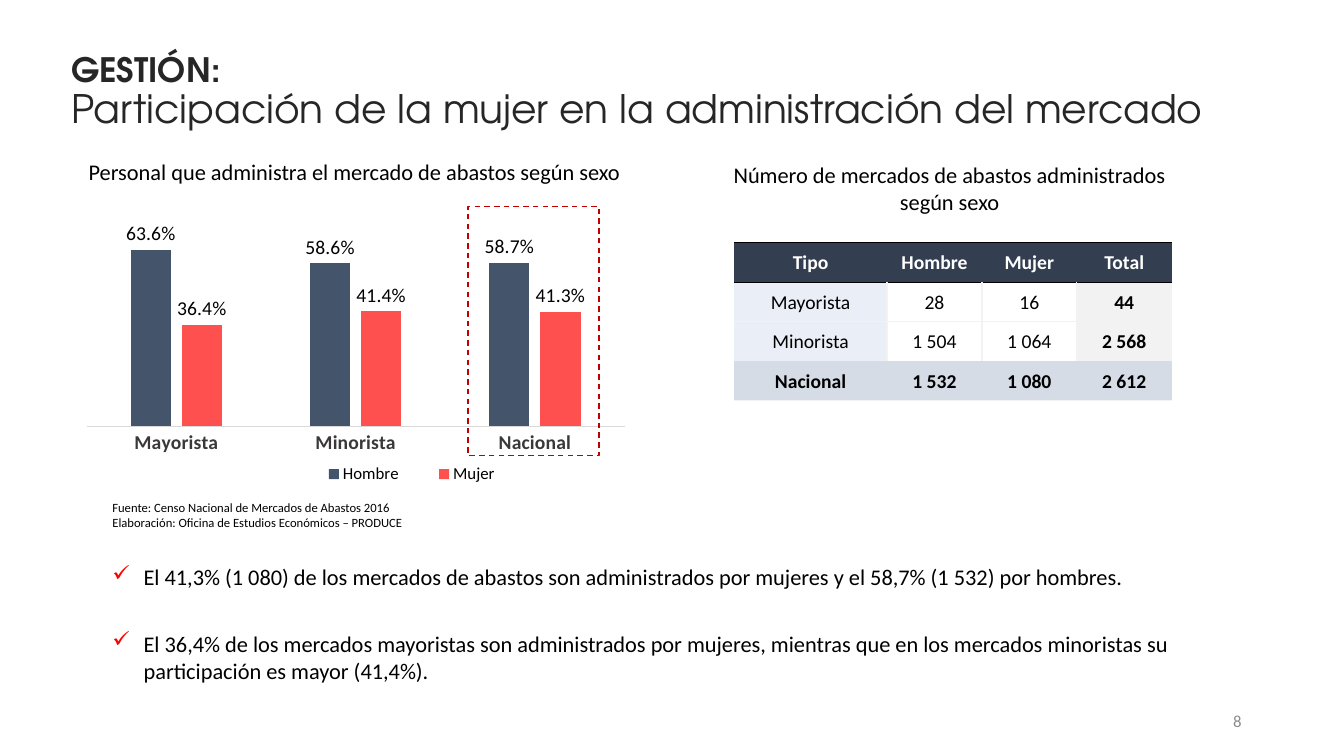
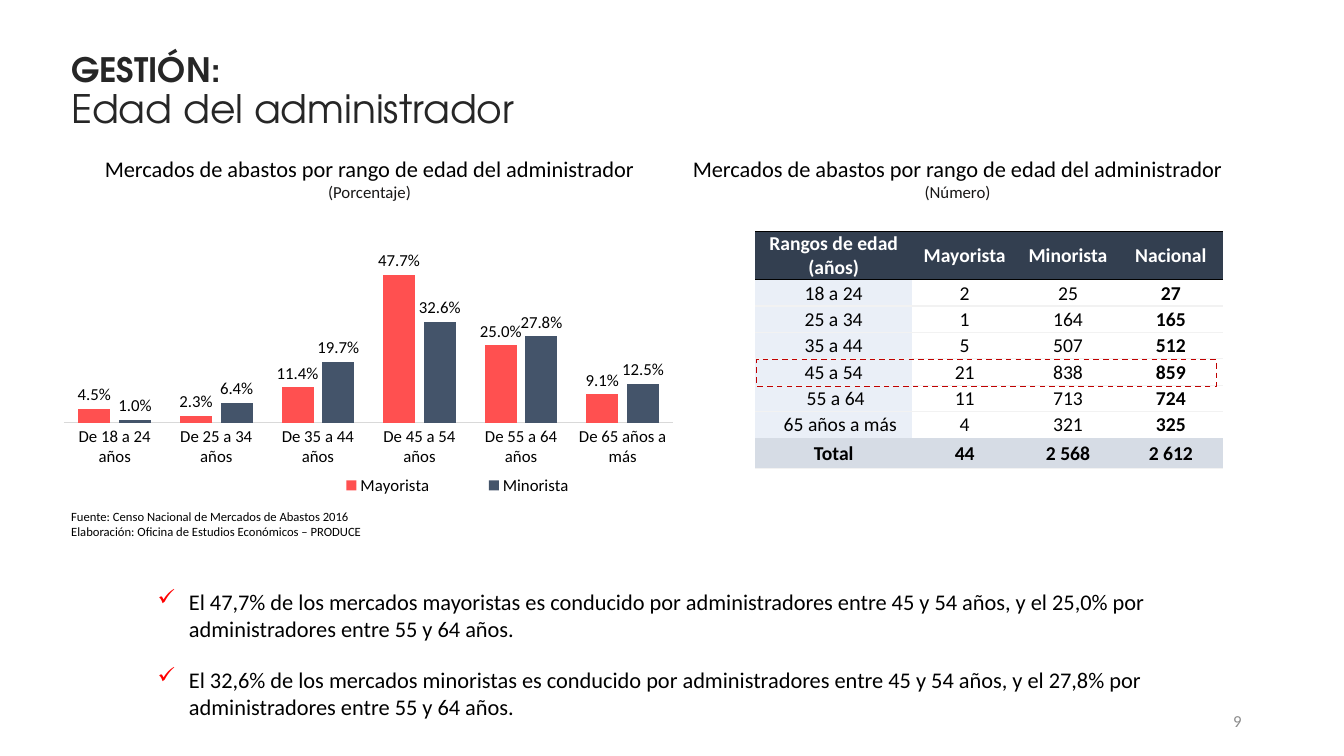
from lxml import etree
from pptx import Presentation
from pptx import util as u
from pptx.chart import data
from pptx.dml import color
from pptx.enum import chart as charts
from pptx.enum import dml, shapes, text
from pptx.oxml import ns

COLUMNS, ROWS = 160, 90
CELL = u.Inches(1) / 12
BODY_FONT, TITLE_FONT = "Calibri", "TeX Gyre Adventor"
BLACK, WHITE, INK, NOTE, GREY = "000000", "FFFFFF", "262626", "181717", "8C8C8C"
SLATE, CORAL, RED, CHECK = "44546A", "FF5050", "C00000", "FF0000"
HEADER, FIRST_COLUMN, TOTAL_ROW = "333F50", "EAEFF7", "D6DCE5"
PALE, AXIS_LINE, AXIS_TEXT = "F2F2F2", "D9D9D9", "3B3838"
LEFT, CENTER, RIGHT = text.PP_ALIGN.LEFT, text.PP_ALIGN.CENTER, text.PP_ALIGN.RIGHT
MIDDLE = text.MSO_ANCHOR.MIDDLE
SOURCE = [
    "Fuente: Censo Nacional de Mercados de Abastos 2016",
    "Elaboración: Oficina de Estudios Económicos – PRODUCE",
]


def rgb(value):
    return color.RGBColor.from_string(value)


def grid(*cells):
    """Turn grid cells into slide lengths."""
    return [u.Emu(round(cell * CELL)) for cell in cells]


def style(font, size, shade=BLACK, bold=False, name=BODY_FONT):
    font.name, font.size, font.bold = name, u.Pt(size), bold
    font.color.rgb = rgb(shade)


def add_node(parent, tag, **attributes):
    return etree.SubElement(parent, ns.qn(tag), **attributes)


def set_borders(cell, borders):
    """Draw the given sides, each a (colour, points) pair, and clear the rest."""
    properties = cell._tc.get_or_add_tcPr()
    for side in "LRTB":
        shade, width = borders.get(side, (None, 0))
        line = add_node(properties, f"a:ln{side}", w=str(u.Pt(width)))
        if shade:
            add_node(add_node(line, "a:solidFill"), "a:srgbClr", val=shade)
        else:
            add_node(line, "a:noFill")


def set_layout(part, index, area, inner=False):
    """Place a chart part by shares of the chart's size."""
    for old in part.findall(ns.qn("c:layout")):
        part.remove(old)
    layout = etree.Element(ns.qn("c:layout"))
    manual = add_node(layout, "c:manualLayout")
    if inner:
        add_node(manual, "c:layoutTarget", val="inner")
    for axis in "xy":
        add_node(manual, f"c:{axis}Mode", val="edge")
    for key, share in zip("xywh", area):
        add_node(manual, f"c:{key}", val=str(share))
    part.insert(index, layout)


class Report:
    def __init__(self):
        self.deck = Presentation()
        self.deck.slide_width, self.deck.slide_height = grid(COLUMNS, ROWS)
        self.page = None

    def new_page(self, topic, number):
        self.page = self.deck.slides.add_slide(self.deck.slide_layouts[6])
        para, = self.text([f"GESTIÓN:\v{topic}"], (7.3, 4.7, 143.5, 12.6), anchor=MIDDLE)
        para.line_spacing = 0.9
        section, subject = para.runs
        style(section.font, 24, INK, True, TITLE_FONT)
        style(subject.font, 28, INK, False, TITLE_FONT)
        self.text([number], (113, 83.4, 36, 4.8), 12, GREY, RIGHT, MIDDLE)

    def text(self, lines, at, size=16, shade=BLACK, align=LEFT, anchor=text.MSO_ANCHOR.TOP):
        frame = self.page.shapes.add_textbox(*grid(*at)).text_frame
        frame.word_wrap, frame.vertical_anchor = True, anchor
        frame.text = "\n".join(lines)
        for para in frame.paragraphs:
            para.alignment = align
            for span in para.runs:
                style(span.font, size, shade)
        return frame.paragraphs

    def heading(self, title, at, unit=None):
        paras = self.text([title, unit] if unit else [title], at, align=CENTER)
        for para in paras[1:]:
            style(para.runs[0].font, 12, NOTE)

    def source(self, left, top):
        self.text(SOURCE, (left, top, 43.4, 4.8), 9)

    def finding(self, sentence, at):
        para, = self.text([sentence], at)
        properties = para._p.get_or_add_pPr()
        indent = u.Inches(0.31)
        properties.set("marL", str(indent))
        properties.set("indent", str(-indent))
        add_node(add_node(properties, "a:buClr"), "a:srgbClr", val=CHECK)
        add_node(properties, "a:buChar", char="✓")

    def highlight(self, at):
        frame = self.page.shapes.add_shape(shapes.MSO_SHAPE.RECTANGLE, *grid(*at))
        frame.shadow.inherit = False
        frame.fill.background()
        frame.line.color.rgb = rgb(RED)
        frame.line.width = u.Pt(1)
        frame.line.dash_style = dml.MSO_LINE.DASH

    def columns(self, at, categories, series, gap, top, plot, legend, label_size, axis_font):
        """Draw a column chart; series holds (name, colour, values) and top ends the scale."""
        values = data.CategoryChartData(number_format="0.0%")
        values.categories = categories
        for name, _, numbers in series:
            values.add_series(name, numbers)
        kind = charts.XL_CHART_TYPE.COLUMN_CLUSTERED
        chart = self.page.shapes.add_chart(kind, *grid(*at), values).chart
        style(chart.font, 10)
        chart.has_title = False

        bars = chart.plots[0]
        bars.gap_width, bars.overlap, bars.vary_by_categories = gap, -27, False
        for bar, (_, shade, _) in zip(bars.series, series):
            bar.format.fill.solid()
            bar.format.fill.fore_color.rgb = rgb(shade)
            labels = bar.data_labels
            labels.show_value = True
            labels.number_format, labels.number_format_is_linked = "0.0%", False
            labels.position = charts.XL_LABEL_POSITION.OUTSIDE_END
            style(labels.font, label_size)

        scale = chart.value_axis
        scale.visible = scale.has_major_gridlines = False
        scale.minimum_scale, scale.maximum_scale = 0, top
        axis = chart.category_axis
        axis.major_tick_mark = axis.minor_tick_mark = charts.XL_TICK_MARK.NONE
        axis.format.line.color.rgb = rgb(AXIS_LINE)
        axis.format.line.width = u.Pt(0.75)
        style(axis.tick_labels.font, *axis_font)

        chart.has_legend = True
        chart.legend.position = charts.XL_LEGEND_POSITION.BOTTOM
        chart.legend.include_in_layout = False
        style(chart.legend.font, 12)
        set_layout(chart.element.find(".//" + ns.qn("c:plotArea")), 0, plot, inner=True)
        set_layout(chart.element.find(".//" + ns.qn("c:legend")), 1, legend)

    def table(self, left, top, widths, heights, rows, total_fill, ruled=False, nudges=None):
        """Draw a table; ruled adds column lines and nudges shifts first cells by row."""
        size = (left, top, sum(widths), sum(heights))
        shape = self.page.shapes.add_table(len(rows), len(widths), *grid(*size))
        table = shape.table
        table.horz_banding = False
        for column, width in zip(table.columns, grid(*widths)):
            column.width = width
        for row, height in zip(table.rows, grid(*heights)):
            row.height = height
        last_row, last_column = len(rows) - 1, len(widths) - 1
        for r, row in enumerate(rows):
            for c, words in enumerate(row):
                head, total, body = r == 0, r == last_row, 0 < r < last_row
                borders = {}
                if head:
                    borders = {"T": (BLACK, 0.5), "B": (BLACK, 0.5)}
                elif r != last_row - 1:
                    borders["B"] = (PALE, 1)
                if r == 1:
                    borders["T"] = (BLACK, 0.5)
                elif body:
                    borders["T"] = (PALE, 1)
                if ruled and body:
                    if c > 0:
                        borders["L"] = (PALE, 1)
                    if c < last_column:
                        borders["R"] = (PALE, 1)
                fill = (HEADER if head else TOTAL_ROW if total else FIRST_COLUMN if c == 0
                        else total_fill if c == last_column else WHITE)
                cell = table.cell(r, c)
                set_borders(cell, borders)
                cell.fill.solid()
                cell.fill.fore_color.rgb = rgb(fill)
                cell.vertical_anchor = MIDDLE
                cell.margin_left = cell.margin_right = cell.margin_top = u.Inches(0.01)
                cell.margin_bottom = 0
                if c == 0 and nudges and r in nudges:
                    cell.margin_left, = grid(nudges[r])
                cell.text_frame.text = words
                para = cell.text_frame.paragraphs[0]
                para.alignment = CENTER
                bold = not body or c == last_column
                style(para.runs[0].font, 14, WHITE if head else BLACK, bold)


def add_gender_page(report):
    report.new_page("Participación de la mujer en la administración del mercado", "8")
    report.columns(
        (9, 26.3, 66.7, 32.6),
        ["Mayorista", "Minorista", "Nacional"],
        [("Hombre", SLATE, (0.636, 0.586, 0.587)), ("Mujer", CORAL, (0.364, 0.414, 0.413))],
        gap=219, top=0.7, plot=(0.02, 0.04, 0.96, 0.71), legend=(0.39, 0.87, 0.42, 0.11),
        label_size=14, axis_font=(14, AXIS_TEXT, True))
    report.heading("Personal que administra el mercado de abastos según sexo",
                   (8.8, 18.2, 66.8, 4.4))
    report.table(
        87.4, 28.9, [18.2] + [11.3] * 3, [4.71] * 4,
        [["Tipo", "Hombre", "Mujer", "Total"],
         ["Mayorista", "28", "16", "44"],
         ["Minorista", "1 504", "1 064", "2 568"],
         ["Nacional", "1 532", "1 080", "2 612"]],
        total_fill=PALE, ruled=True)
    report.heading("Número de mercados de abastos administrados según sexo",
                   (83.3, 18.6, 59.5, 7.7))
    report.finding("El 41,3% (1 080) de los mercados de abastos son administrados por mujeres "
                   "y el 58,7% (1 532) por hombres.", (12.2, 66.5, 136.6, 4.4))
    report.finding("El 36,4% de los mercados mayoristas son administrados por mujeres, mientras "
                   "que en los mercados minoristas su participación es mayor (41,4%).",
                   (12.2, 74.4, 142, 7.7))
    report.highlight((55.7, 24.6, 15.6, 29.6))
    report.source(12.2, 58.9)


def add_age_page(report):
    report.new_page("Edad del administrador", "9")
    for left, unit in ((8.6, "(Porcentaje)"), (78.6, "(Número)")):
        report.heading("Mercados de abastos por rango de edad del administrador",
                       (left, 17.9, 70.8, 6.8), unit)
    ranges = ["18 a 24", "25 a 34", "35 a 44", "45 a 54", "55 a 64"]
    report.columns(
        (6.1, 27.5, 75.6, 33.1),
        [f"De {ages} años" for ages in ranges] + ["De 65 años a más"],
        [("Mayorista", CORAL, (0.045, 0.023, 0.114, 0.477, 0.25, 0.091)),
         ("Minorista", SLATE, (0.01, 0.064, 0.197, 0.326, 0.278, 0.125))],
        gap=90, top=0.6, plot=(0.02, 0.02, 0.96, 0.67), legend=(0.38, 0.86, 0.52, 0.11),
        label_size=12, axis_font=(12,))
    counts = [("2", "25", "27"), ("1", "164", "165"), ("5", "507", "512"),
              ("21", "838", "859"), ("11", "713", "724"), ("4", "321", "325")]
    report.table(
        89.9, 27.5, [18.7, 12.5, 12.1, 12.4], [5.8] + [3.14] * 6 + [3.7],
        [["Rangos de edad (años)", "Mayorista", "Minorista", "Nacional"],
         *([ages, *row] for ages, row in zip(ranges + ["65 años a más"], counts)),
         ["Total", "44", "2 568", "2 612"]],
        total_fill=WHITE, nudges={5: 0.6, 6: 1.7})
    for kind, first, second, top, width in (("mayoristas", "47,7%", "25,0%", 69.4, 129.5),
                                            ("minoristas", "32,6%", "27,8%", 78.7, 132)):
        report.finding(f"El {first} de los mercados {kind} es conducido por administradores "
                       f"entre 45 y 54 años, y el {second} por administradores entre 55 y 64 "
                       "años.", (17.6, top, width, 7.7))
    report.highlight((90.1, 42.8, 54.7, 3.2))
    report.source(7.3, 60)


def main():
    report = Report()
    add_gender_page(report)
    add_age_page(report)
    report.deck.save("out.pptx")


if __name__ == "__main__":
    main()
